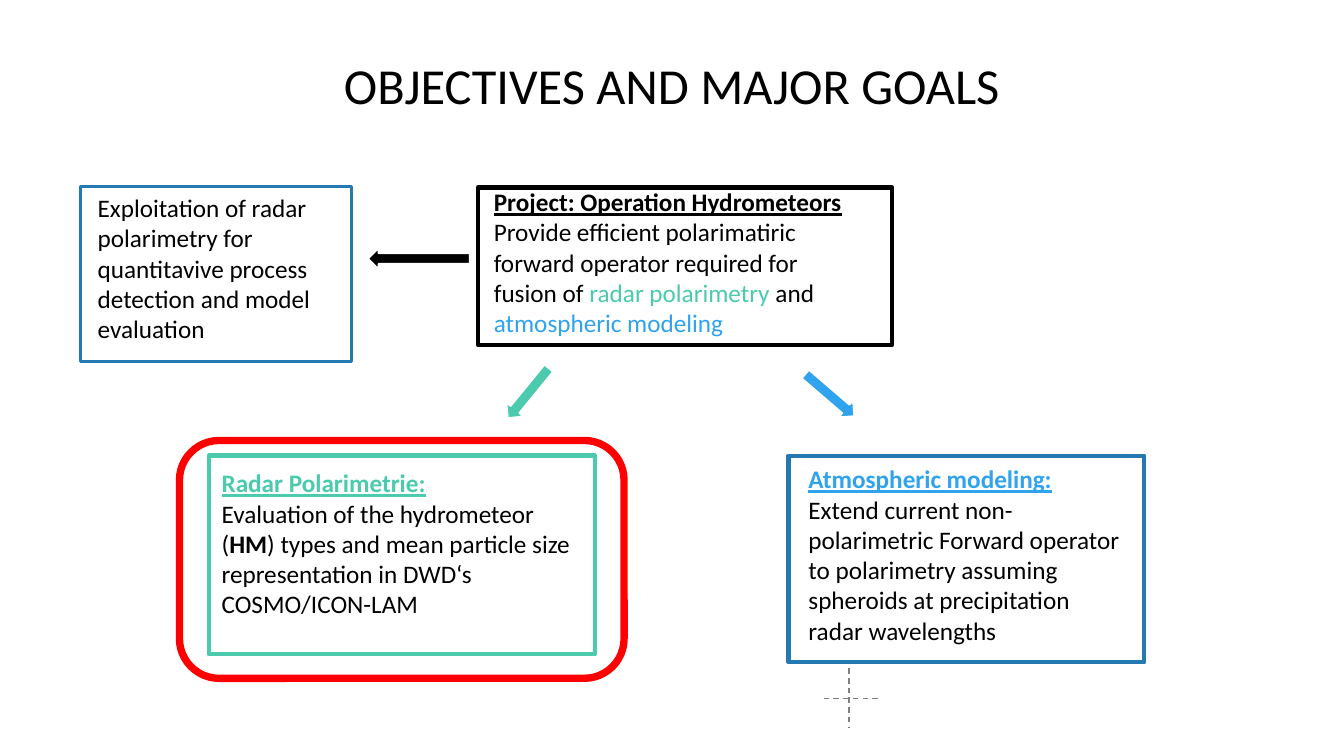
from lxml import etree
from pptx import Presentation
from pptx.dml.color import RGBColor
from pptx.enum.dml import MSO_LINE
from pptx.enum.shapes import MSO_CONNECTOR, MSO_SHAPE
from pptx.enum.text import MSO_ANCHOR, PP_ALIGN
from pptx.oxml.ns import qn
from pptx.util import Inches, Pt

RECTANGLE = MSO_SHAPE.RECTANGLE
ROUNDED = MSO_SHAPE.ROUNDED_RECTANGLE
RIGHT_ARROW = MSO_SHAPE.RIGHT_ARROW
STRAIGHT = MSO_CONNECTOR.STRAIGHT
DASH = MSO_LINE.DASH
TOP = MSO_ANCHOR.TOP
MIDDLE = MSO_ANCHOR.MIDDLE
LEFT = PP_ALIGN.LEFT
CENTER = PP_ALIGN.CENTER

BLACK = RGBColor(0x00, 0x00, 0x00)
WHITE = RGBColor(0xFF, 0xFF, 0xFF)
GRAY = RGBColor(0x80, 0x80, 0x80)
RED = RGBColor(0xFF, 0x00, 0x00)
DARK_BLUE = RGBColor(0x23, 0x79, 0xB0)
SKY_BLUE = RGBColor(0x2F, 0xA3, 0xEE)
TEAL = RGBColor(0x4B, 0xCA, 0xAD)
FONT = "Calibri"


def add_span(para, text, size=18, color=BLACK, bold=False, underline=False):
    span = para.add_run()
    span.text = text
    font = span.font
    font.name = FONT
    font.size = Pt(size)
    font.color.rgb = color
    font.bold = bold
    font.underline = underline


def add_text(page, bounds, paragraphs, anchor=TOP, align=LEFT, spacing=1.0):
    """Each paragraph is a list of (text, format keywords) spans."""
    box = page.shapes.add_textbox(*map(Inches, bounds))
    frame = box.text_frame
    frame.word_wrap = True
    frame.vertical_anchor = anchor
    for index, spans in enumerate(paragraphs):
        para = frame.add_paragraph() if index else frame.paragraphs[0]
        para.alignment = align
        para.line_spacing = spacing
        for text, style in spans:
            add_span(para, text, **style)


def add_frame(page, bounds, color, width=3, kind=RECTANGLE):
    frame = page.shapes.add_shape(kind, *map(Inches, bounds))
    frame.shadow.inherit = False
    frame.fill.background()
    frame.line.color.rgb = color
    frame.line.width = Pt(width)


def add_block_arrow(page, bounds, rotation, color):
    arrow = page.shapes.add_shape(RIGHT_ARROW, *map(Inches, bounds))
    arrow.shadow.inherit = False
    arrow.rotation = rotation
    arrow.fill.solid()
    arrow.fill.fore_color.rgb = color
    arrow.line.color.rgb = WHITE
    arrow.line.width = Pt(1.25)


def add_dashed_line(page, ends):
    line = page.shapes.add_connector(STRAIGHT, *map(Inches, ends))
    line.line.color.rgb = GRAY
    line.line.width = Pt(1)
    line.line.dash_style = DASH
    etree.SubElement(line._element.spPr, qn("a:effectLst"))


def heading(text, color=BLACK):
    return [(text, {"color": color, "bold": True, "underline": True})]


def main():
    deck = Presentation()
    deck.slide_width = Inches(13.33)
    deck.slide_height = Inches(7.5)
    page = deck.slides.add_slide(deck.slide_layouts[6])

    add_dashed_line(page, (8.42, 6.63, 8.42, 7.22))
    add_dashed_line(page, (8.17, 6.93, 8.71, 6.93))

    add_text(page, (1, 0, 11.33, 1.75),
             [[("OBJECTIVES AND MAJOR GOALS", {"size": 36})]],
             anchor=MIDDLE, align=CENTER, spacing=0.9)

    add_frame(page, (0.8, 1.85, 2.69, 1.74), DARK_BLUE, width=2.25)
    add_text(page, (0.87, 1.86, 2.69, 1.62), [
        [("Exploitation of radar polarimetry for quantitavive process "
          "detection and model evaluation", {})],
    ])

    add_frame(page, (4.74, 1.86, 4.11, 1.56), BLACK)
    add_text(page, (4.8, 1.8, 3.84, 1.62), [
        heading("Project: Operation Hydrometeors"),
        [("Provide efficient polarimatiric forward operator required for "
          "fusion of ", {}),
         ("radar polarimetry ", {"color": TEAL}),
         ("and ", {}),
         ("atmospheric modeling", {"color": SKY_BLUE})],
    ])

    add_frame(page, (2.07, 4.52, 3.83, 1.97), TEAL)
    add_text(page, (2.1, 4.59, 3.8, 1.92), [
        heading("Radar Polarimetrie:", TEAL),
        [("Evaluation of the hydrometeor (", {}),
         ("HM", {"bold": True}),
         (") types and mean particle size representation in DWD‘s "
          "COSMO/ICON-LAM", {})],
    ])
    add_frame(page, (1.78, 4.37, 4.41, 2.36), RED, width=5.25, kind=ROUNDED)

    add_frame(page, (7.82, 4.52, 3.53, 2.05), DARK_BLUE)
    add_text(page, (7.92, 4.55, 3.33, 1.92), [
        heading("Atmospheric modeling:", SKY_BLUE),
        [("Extend current non-polarimetric Forward operator to polarimetry "
          "assuming spheroids at precipitation radar wavelengths", {})],
    ])

    add_block_arrow(page, (3.65, 2.46, 1.01, 0.21), 180, BLACK)
    add_block_arrow(page, (4.92, 3.79, 0.64, 0.22), 129.3, TEAL)
    add_block_arrow(page, (7.91, 3.81, 0.64, 0.22), 40.7, SKY_BLUE)

    deck.save("out.pptx")


if __name__ == "__main__":
    main()
